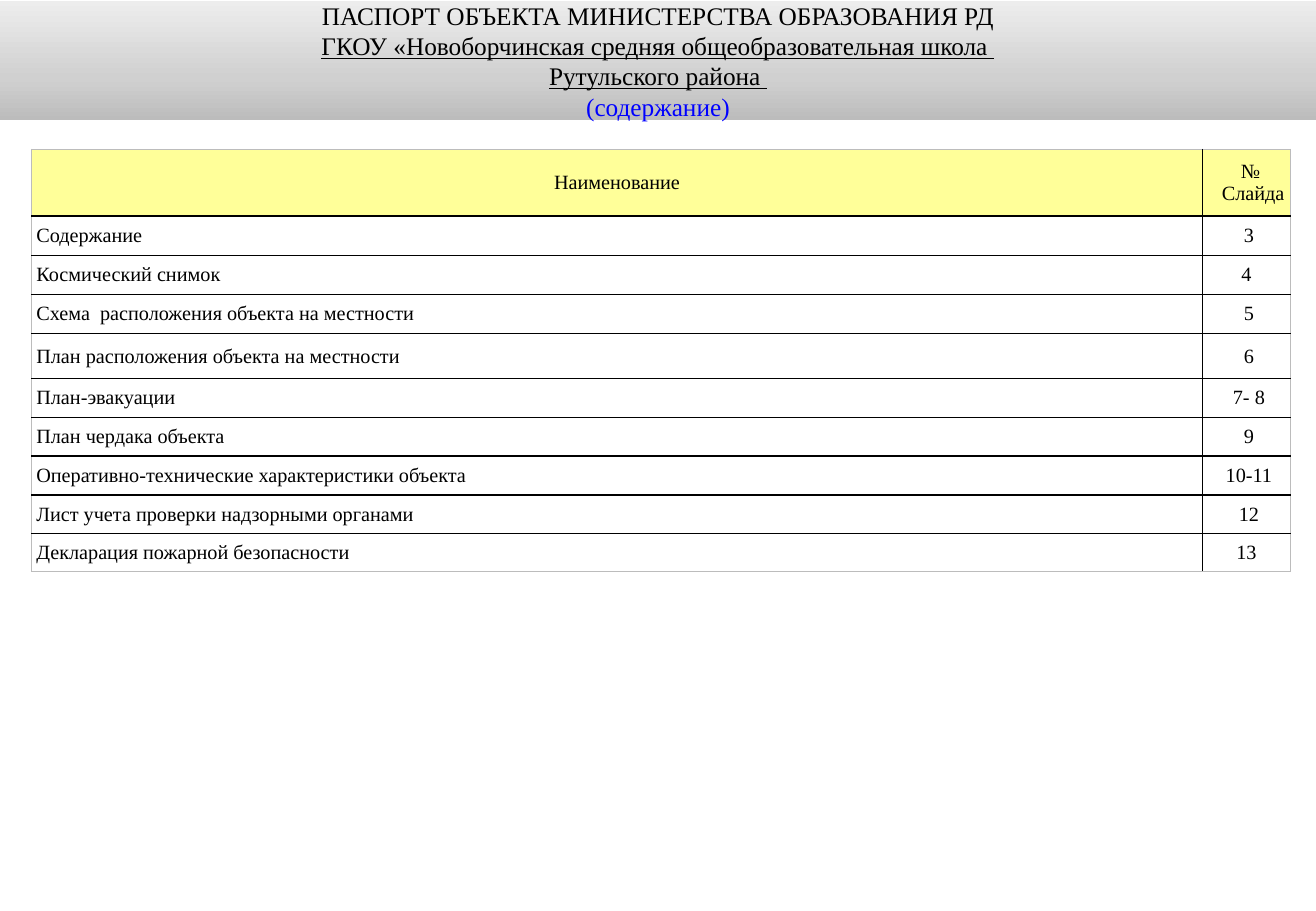
from dataclasses import dataclass

from lxml import etree
from pptx import Presentation
from pptx import util as u
from pptx.dml.color import RGBColor
from pptx.enum import text
from pptx.oxml import ns


@dataclass(frozen=True)
class Theme:
    font: str = "Times New Roman"
    title_size: float = 15
    table_size: float = 12
    ink: str = "000000"
    accent: str = "0000FF"
    header_fill: str = "FFFF99"
    outer_line: str = "BCBCBC"
    banner_stops: tuple = ((0, "BCBCBC"), (35, "D0D0D0"), (100, "EDEDED"))
    inner_width: float = 1
    outer_width: float = 0.5


class ContentsSlide:
    def __init__(self, deck, theme):
        self.theme = theme
        self.slide = deck.slides.add_slide(deck.slide_layouts[5])

    def add_lines(self, frame, lines, size, align, indent=0):
        for index, (words, color, underline) in enumerate(lines):
            paragraph = frame.paragraphs[0] if index == 0 else frame.add_paragraph()
            paragraph.alignment = align
            paragraph.space_before = u.Pt(0)
            if indent:
                paragraph._p.get_or_add_pPr().set("marL", str(u.Cm(indent)))
            run = paragraph.add_run()
            run.text = words
            run.font.name = self.theme.font
            run.font.size = u.Pt(size)
            run.font.underline = underline
            run.font.color.rgb = RGBColor.from_string(color)

    def banner(self, lines, left, top, width, height):
        title = self.slide.shapes.title
        title.left, title.top = u.Cm(left), u.Cm(top)
        title.width, title.height = u.Cm(width), u.Cm(height)
        title.fill.gradient()
        title.fill.gradient_angle = 90
        stops = title._element.spPr.find(".//" + ns.qn("a:gsLst"))
        for stop in list(stops):
            stops.remove(stop)
        for position, color in self.theme.banner_stops:
            stop = etree.SubElement(stops, ns.qn("a:gs"), pos=str(position * 1000))
            etree.SubElement(stop, ns.qn("a:srgbClr"), val=color)
        frame = title.text_frame
        frame.word_wrap = True
        frame.auto_size = text.MSO_AUTO_SIZE.NONE
        frame.vertical_anchor = text.MSO_ANCHOR.MIDDLE
        frame.margin_left = frame.margin_right = u.Cm(0.25)
        frame.margin_top = frame.margin_bottom = u.Cm(0.13)
        self.add_lines(frame, lines, self.theme.title_size, text.PP_ALIGN.CENTER)

    def border(self, cell, side, outer):
        theme = self.theme
        width = theme.outer_width if outer else theme.inner_width
        line = etree.SubElement(
            cell._tc.get_or_add_tcPr(), ns.qn("a:ln" + side), w=str(u.Pt(width))
        )
        paint = etree.SubElement(line, ns.qn("a:solidFill"))
        color = theme.outer_line if outer else theme.ink
        etree.SubElement(paint, ns.qn("a:srgbClr"), val=color)

    def contents(self, entries, left, top, columns, rows):
        theme = self.theme
        table = self.slide.shapes.add_table(
            len(rows), len(columns), u.Cm(left), u.Cm(top),
            u.Cm(sum(columns)), u.Cm(sum(rows)),
        ).table
        table.horz_banding = False
        for column, width in zip(table.columns, columns):
            column.width = u.Cm(width)
        for row, height in zip(table.rows, rows):
            row.height = u.Cm(height)
        for r, entry in enumerate(entries):
            for c, words in enumerate(entry):
                cell = table.cell(r, c)
                edges = {
                    "L": c == 0,
                    "R": c == len(columns) - 1,
                    "T": r == 0,
                    "B": r == len(rows) - 1,
                }
                for side, outer in edges.items():
                    self.border(cell, side, outer)
                if r == 0:
                    cell.fill.solid()
                    cell.fill.fore_color.rgb = RGBColor.from_string(theme.header_fill)
                else:
                    cell.fill.background()
                cell.margin_left = cell.margin_right = 0
                cell.margin_top = cell.margin_bottom = 0
                cell.vertical_anchor = text.MSO_ANCHOR.MIDDLE
                centered = r == 0 or c == 1
                align = text.PP_ALIGN.CENTER if centered else text.PP_ALIGN.LEFT
                indent = (0.28 if c else 0) if r == 0 else (0 if c else 0.1)
                lines = [(line, theme.ink, False) for line in words.split("\n")]
                self.add_lines(cell.text_frame, lines, theme.table_size, align, indent)


def main():
    theme = Theme()
    deck = Presentation()
    deck.slide_width, deck.slide_height = u.Cm(27.52), u.Cm(19.05)
    passport = ContentsSlide(deck, theme)
    passport.banner(
        [
            ("ПАСПОРТ ОБЪЕКТА МИНИСТЕРСТВА ОБРАЗОВАНИЯ РД", theme.ink, False),
            ("ГКОУ «Новоборчинская средняя общеобразовательная школа ", theme.ink, True),
            ("Рутульского района ", theme.ink, True),
            ("(содержание)", theme.accent, False),
        ],
        0, 0.02, 27.52, 2.49,
    )
    passport.contents(
        [
            ("Наименование", "№ \nСлайда"),
            ("Содержание", " 3"),
            ("Космический снимок", "4"),
            ("Схема  расположения объекта на местности", " 5"),
            ("План расположения объекта на местности", " 6"),
            ("План-эвакуации", " 7- 8"),
            ("План чердака объекта", " 9"),
            ("Оперативно-технические характеристики объекта", " 10-11"),
            ("Лист учета проверки надзорными органами", " 12"),
            ("Декларация пожарной безопасности", "13"),
        ],
        0.66, 3.12, [24.49, 1.83],
        [1.4] + [0.82] * 3 + [0.94] + [0.81] * 4 + [0.79],
    )
    deck.save("out.pptx")


if __name__ == "__main__":
    main()
